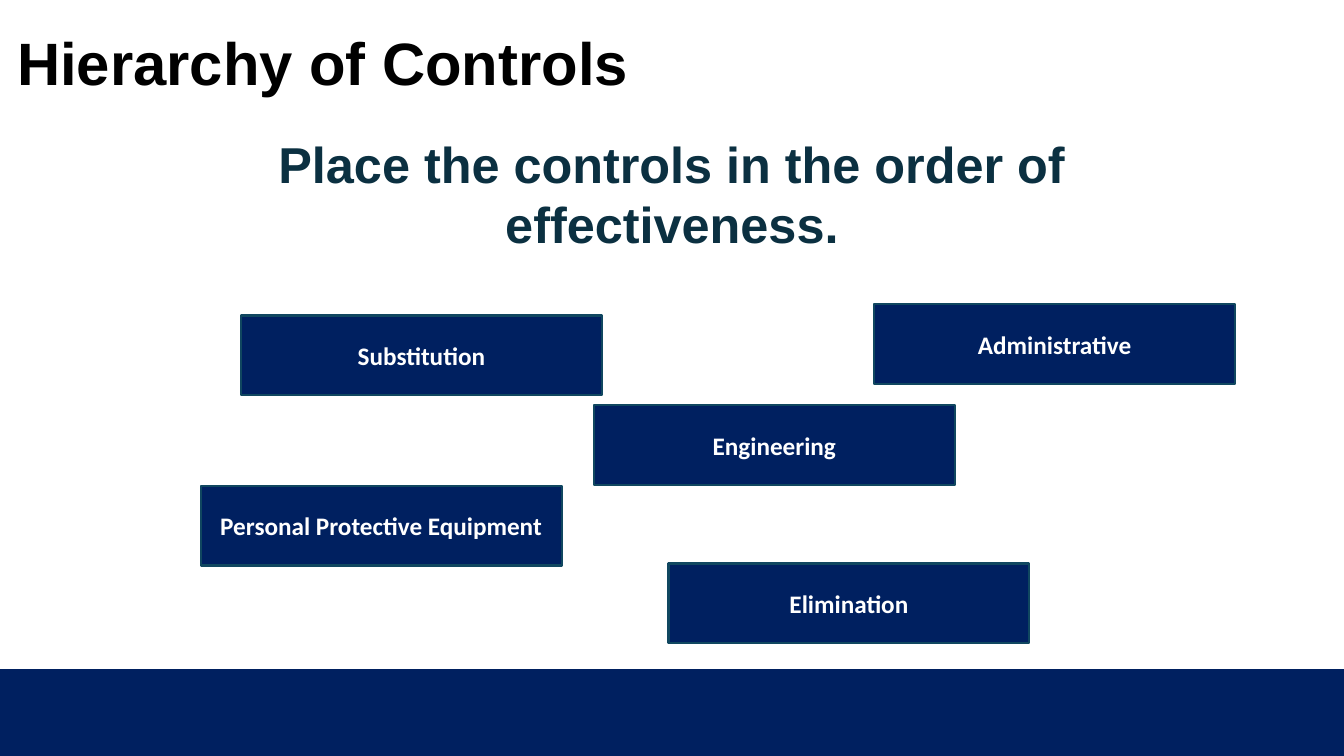
from dataclasses import dataclass

from pptx import Presentation
from pptx.dml.color import RGBColor
from pptx.enum.shapes import MSO_SHAPE
from pptx.enum.text import MSO_ANCHOR, MSO_AUTO_SIZE, PP_ALIGN
from pptx.shapes.autoshape import Shape
from pptx.slide import Slide
from pptx.util import Emu, Pt

EMU_PER_PX = 9144  # 100 px to the inch
SLIDE_WIDTH, SLIDE_HEIGHT = 1333, 750
BAND_TOP = 665
CARD_WIDTH, CARD_HEIGHT = 358, 79
TITLE_ONLY = 5

RECTANGLE = MSO_SHAPE.RECTANGLE
MIDDLE, TOP = MSO_ANCHOR.MIDDLE, MSO_ANCHOR.TOP
LEFT, CENTER = PP_ALIGN.LEFT, PP_ALIGN.CENTER
NO_AUTOFIT = MSO_AUTO_SIZE.NONE

COLORS = {
    "navy": "002060",
    "card_edge": "104760",
    "prompt": "0B3041",
    "black": "000000",
    "white": "FFFFFF",
}


@dataclass(frozen=True)
class Box:
    left: int
    top: int
    width: int
    height: int

    def emu(self) -> list[Emu]:
        return [Emu(px * EMU_PER_PX)
                for px in (self.left, self.top, self.width, self.height)]


@dataclass(frozen=True)
class TextStyle:
    font: str
    size: float
    color: str
    align: PP_ALIGN
    anchor: MSO_ANCHOR
    line_spacing: float = 1.0


@dataclass(frozen=True)
class Control:
    label: str
    left: int
    top: int


TITLE_STYLE = TextStyle("Arial", 42.7, "black", LEFT, MIDDLE, 0.9)
PROMPT_STYLE = TextStyle("Arial", 36, "prompt", CENTER, TOP)
CARD_STYLE = TextStyle("Calibri", 18, "white", CENTER, MIDDLE)

CONTROLS = [
    Control("Administrative", 867, 302),
    Control("Personal Protective Equipment", 199, 482),
    Control("Engineering", 589, 402),
    Control("Substitution", 239, 313),
    Control("Elimination", 663, 559),
]


def rgb(color: str) -> RGBColor:
    return RGBColor.from_string(COLORS[color])


def write(shape: Shape, text: str, style: TextStyle) -> None:
    frame = shape.text_frame
    frame.text = text
    frame_format = {"word_wrap": True, "auto_size": NO_AUTOFIT,
                    "vertical_anchor": style.anchor}
    for name, value in frame_format.items():
        setattr(frame, name, value)
    paragraph = frame.paragraphs[0]
    paragraph.alignment = style.align
    paragraph.line_spacing = style.line_spacing
    font = paragraph.runs[0].font
    for name, value in {"name": style.font, "size": Pt(style.size), "bold": True}.items():
        setattr(font, name, value)
    font.color.rgb = rgb(style.color)


def add_rectangle(slide: Slide, box: Box, edge: str) -> Shape:
    rectangle = slide.shapes.add_shape(RECTANGLE, *box.emu())
    rectangle.shadow.inherit = False
    rectangle.fill.solid()
    rectangle.fill.fore_color.rgb = rgb("navy")
    rectangle.line.color.rgb = rgb(edge)
    rectangle.line.width = Pt(1.5)
    return rectangle


def place_title(slide: Slide, text: str, box: Box) -> None:
    title = slide.shapes.title
    for name, value in zip(("left", "top", "width", "height"), box.emu()):
        setattr(title, name, value)
    write(title, text, TITLE_STYLE)


def main() -> None:
    presentation = Presentation()
    presentation.slide_width = Emu(SLIDE_WIDTH * EMU_PER_PX)
    presentation.slide_height = Emu(SLIDE_HEIGHT * EMU_PER_PX)
    slide = presentation.slides.add_slide(presentation.slide_layouts[TITLE_ONLY])

    add_rectangle(slide, Box(0, BAND_TOP, SLIDE_WIDTH, SLIDE_HEIGHT - BAND_TOP), "navy")
    place_title(slide, "Hierarchy of Controls", Box(7, 3, 1200, 125))
    for control in CONTROLS:
        card_box = Box(control.left, control.top, CARD_WIDTH, CARD_HEIGHT)
        write(add_rectangle(slide, card_box, "card_edge"), control.label, CARD_STYLE)
    prompt = slide.shapes.add_textbox(*Box(233, 127, 867, 131).emu())
    write(prompt, "Place the controls in the order of effectiveness.", PROMPT_STYLE)

    presentation.save("out.pptx")


if __name__ == "__main__":
    main()
